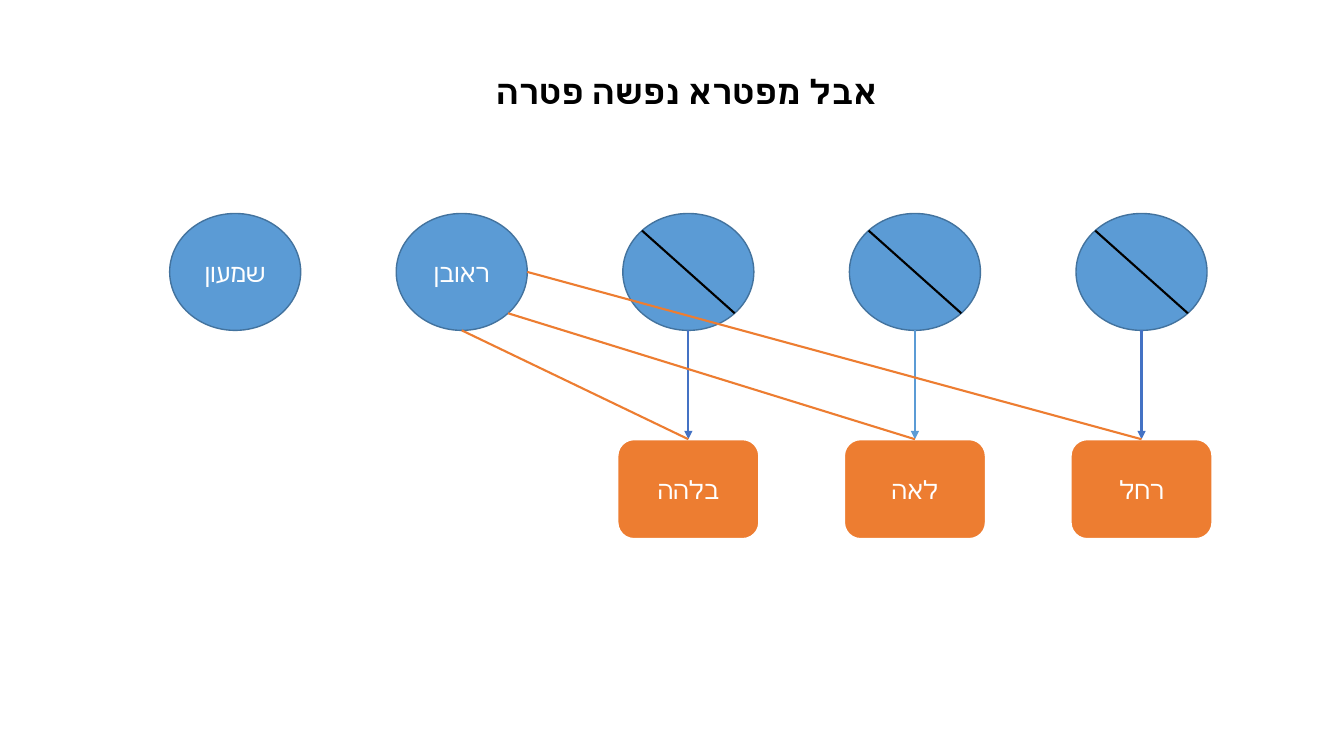
from math import sqrt

from pptx import Presentation
from pptx.dml.color import RGBColor
from pptx.enum.shapes import MSO_CONNECTOR as Connector, MSO_SHAPE as Shape
from pptx.enum.text import MSO_ANCHOR as Anchor, PP_ALIGN as Align
from pptx.oxml.ns import qn
from pptx.util import Pt
from lxml.etree import SubElement

TITLE = "אבל מפטרא נפשה פטרה"
BROTHERS = ["שמעון", "ראובן", "", "", ""]
WIVES = [("בלהה", "indigo"), ("לאה", "blue"), ("רחל", "indigo")]
COLORS = {
    "black": "000000",
    "white": "FFFFFF",
    "blue": "5B9BD5",
    "blue_edge": "43739E",
    "indigo": "4472C4",
    "orange": "ED7D31",
}
FONT = "Roboto"
FIRST_CENTER, PITCH = 168, 161.85
CIRCLE_TOP, CIRCLE_WIDTH, CIRCLE_HEIGHT = 152.5, 93.6, 83.5
WIFE_TOP, WIFE_WIDTH, WIFE_HEIGHT = 313.75, 101.3, 71.3
REUBEN, FIRST_DECEASED = 1, 2
DIAGONAL = 1 / sqrt(2)


def rgb(name):
    return RGBColor.from_string(COLORS[name])


def write(shape, text, size, color, bold=False):
    frame = shape.text_frame
    frame.text = text
    frame.word_wrap = True
    frame.vertical_anchor = Anchor.MIDDLE
    paragraph = frame.paragraphs[0]
    paragraph.alignment = Align.CENTER
    for run in paragraph.runs:
        run.font.name = FONT
        run.font.size = Pt(size)
        run.font.bold = bold
        run.font.color.rgb = rgb(color)
        complex_font = SubElement(run.font._element, qn("a:cs"))
        complex_font.set("typeface", FONT)


def add_person(slide, kind, center, top, width, height, text, fill, edge, weight):
    shape = slide.shapes.add_shape(
        kind, Pt(center - width / 2), Pt(top), Pt(width), Pt(height))
    shape.shadow.inherit = False
    shape.fill.solid()
    shape.fill.fore_color.rgb = rgb(fill)
    shape.line.color.rgb = rgb(edge)
    shape.line.width = Pt(weight)
    write(shape, text, 18, "white")
    return shape


def add_line(slide, start, end, color, target=None, arrow=False):
    line = slide.shapes.add_connector(
        Connector.STRAIGHT, *[Pt(value) for value in (*start, *end)])
    line.line.color.rgb = rgb(color)
    line.line.width = Pt(1.5)
    if arrow:
        SubElement(line.line._get_or_add_ln(), qn("a:tailEnd")).set("type", "triangle")
    SubElement(line._element.spPr, qn("a:effectLst"))
    if target is not None:
        line.end_connect(target, 0)


def rim(index, across, down):
    return (FIRST_CENTER + index * PITCH + across * CIRCLE_WIDTH / 2,
            CIRCLE_TOP + (1 + down) * CIRCLE_HEIGHT / 2)


def main():
    presentation = Presentation()
    presentation.slide_width, presentation.slide_height = Pt(960), Pt(540)
    slide = presentation.slides.add_slide(presentation.slide_layouts[5])

    title = slide.shapes.title
    title.left, title.top, title.width, title.height = Pt(313), Pt(47), Pt(355), Pt(36)
    write(title, TITLE, 24, "black", bold=True)

    for index, name in enumerate(BROTHERS):
        add_person(slide, Shape.OVAL, FIRST_CENTER + index * PITCH, CIRCLE_TOP,
                   CIRCLE_WIDTH, CIRCLE_HEIGHT, name, "blue", "blue_edge", 1)

    wives = []
    for index, (name, arrow_color) in enumerate(WIVES, FIRST_DECEASED):
        center = FIRST_CENTER + index * PITCH
        wife = add_person(slide, Shape.ROUNDED_RECTANGLE, center, WIFE_TOP,
                          WIFE_WIDTH, WIFE_HEIGHT, name, "orange", "white", 1.5)
        wives.append((wife, (center, WIFE_TOP)))
        add_line(slide, rim(index, 0, 1), (center, WIFE_TOP), arrow_color, wife, arrow=True)
        add_line(slide, rim(index, -DIAGONAL, -DIAGONAL),
                 rim(index, DIAGONAL, DIAGONAL), "black")

    reuben_exits = [(0, 1), (DIAGONAL, DIAGONAL), (1, 0)]
    for (wife, top_center), (across, down) in zip(wives, reuben_exits):
        add_line(slide, rim(REUBEN, across, down), top_center, "orange", wife)

    presentation.save("out.pptx")


if __name__ == "__main__":
    main()
